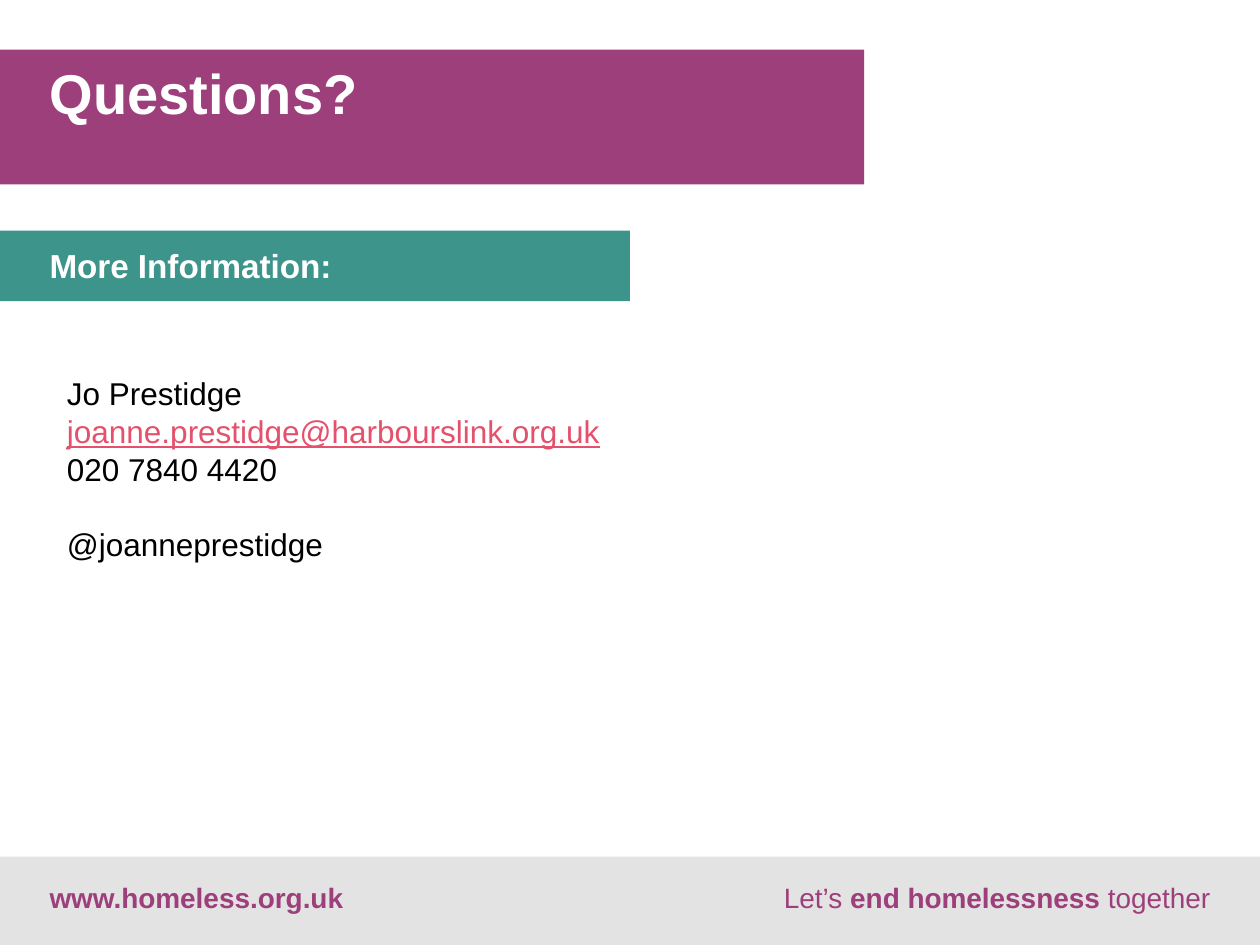
from pptx import Presentation
from pptx.dml.color import RGBColor
from pptx.enum.shapes import MSO_SHAPE as Shape
from pptx.enum.text import MSO_ANCHOR as Anchor, PP_ALIGN as Align
from pptx.util import Cm, Pt

PLUM = RGBColor(0x9D, 0x3F, 0x7B)
TEAL = RGBColor(0x3D, 0x94, 0x8B)
GREY = RGBColor(0xE3, 0xE3, 0xE3)
PINK = RGBColor(0xE5, 0x51, 0x6C)
WHITE = RGBColor(0xFF, 0xFF, 0xFF)
BLACK = RGBColor(0, 0, 0)

WIDE, HIGH = 25.4, 19.05
HALF = WIDE / 2
FOOT = 1.78

BANDS = [
    ("More Information:", (0, 4.65, HALF, 1.42), TEAL, 19, None),
    ("Questions?", (0, 1, 17.42, 2.72), PLUM, 32, 35),
]
LINES = [
    ("Jo Prestidge", BLACK, 0),
    ("joanne.prestidge@harbourslink.org.uk", PINK, 0),
    ("020 7840 4420", BLACK, 0),
    ("@joanneprestidge", BLACK, 21.6),
]
FOOTERS = [
    (Align.LEFT, [("www.homeless.org.uk", True)]),
    (Align.RIGHT, [("Let’s ", False), ("end homelessness", True), (" together", False)]),
]


def add_run(para, text, size, color, bold=False):
    run = para.add_run()
    run.text = text
    font = run.font
    font.name, font.size, font.bold = "Arial", Pt(size), bold
    font.color.rgb = color
    return run


def set_frame(shape, pads, anchor=Anchor.TOP):
    frame = shape.text_frame
    frame.word_wrap = True
    frame.vertical_anchor = anchor
    (frame.margin_left, frame.margin_top,
     frame.margin_right, frame.margin_bottom) = map(Cm, pads)
    return frame


def add_band(slide, box, fill):
    band = slide.shapes.add_shape(Shape.RECTANGLE, *map(Cm, box))
    band.shadow.inherit = False
    band.fill.solid()
    band.fill.fore_color.rgb = fill
    band.line.fill.background()
    return band


def main():
    deck = Presentation()
    deck.slide_width, deck.slide_height = Cm(WIDE), Cm(HIGH)
    slide = deck.slides.add_slide(deck.slide_layouts[6])

    for text, box, fill, size, pitch in BANDS:
        frame = set_frame(add_band(slide, box, fill), (1, 0.3, 0.3, 0.3))
        para = frame.paragraphs[0]
        para.alignment = Align.LEFT
        if pitch:
            para.line_spacing = Pt(pitch)
        add_run(para, text, size, WHITE, True)

    body = slide.shapes.add_textbox(Cm(1.35), Cm(7.54), Cm(17.37), Cm(8.97))
    frame = set_frame(body, (0, 0, 0, 0))
    for i, (text, color, gap) in enumerate(LINES):
        para = frame.add_paragraph() if i else frame.paragraphs[0]
        para.line_spacing = Pt(21.6)
        para.space_before = Pt(gap)
        run = add_run(para, text, 18, color)
        run.font.underline = color == PINK

    for i, (align, runs) in enumerate(FOOTERS):
        band = add_band(slide, (i * HALF, HIGH - FOOT, HALF, FOOT), GREY)
        para = set_frame(band, (1, 0, 1, 0.15), Anchor.MIDDLE).paragraphs[0]
        para.alignment = align
        for text, bold in runs:
            add_run(para, text, 16, PLUM, bold)

    deck.save("out.pptx")


if __name__ == "__main__":
    main()
